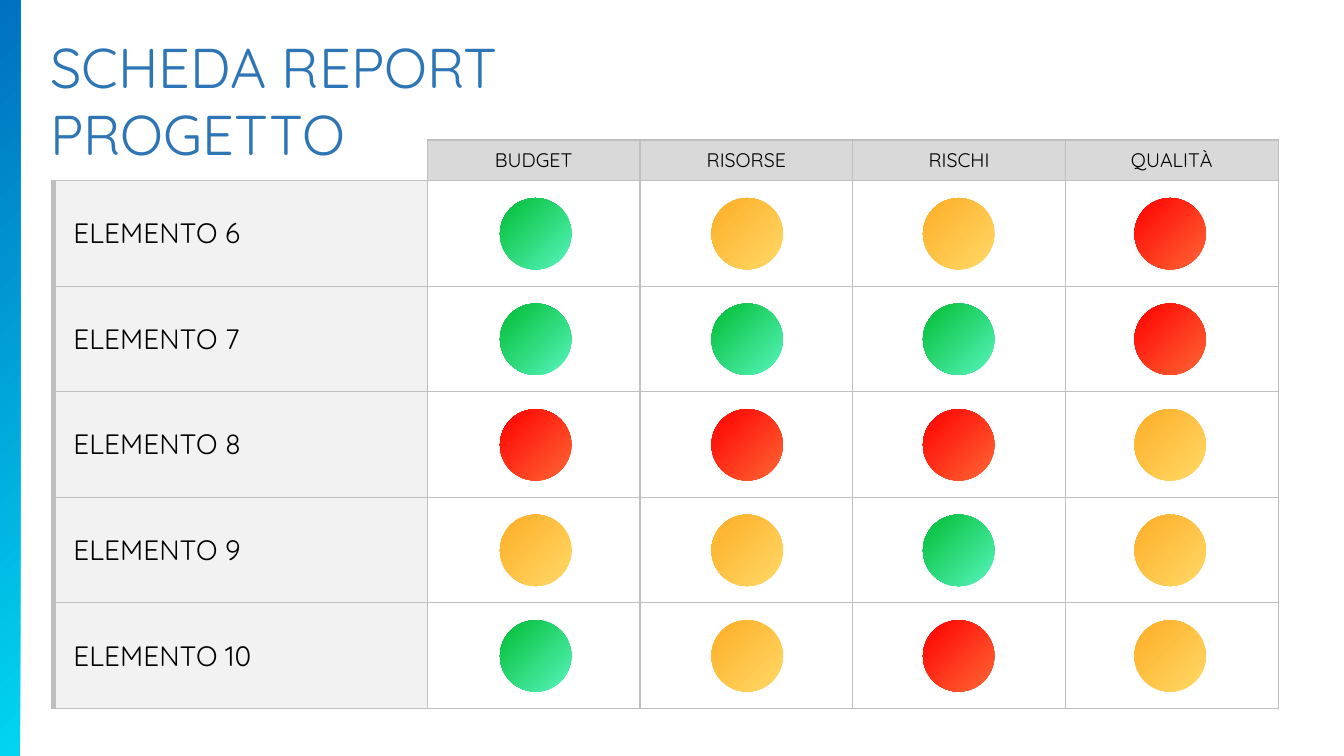
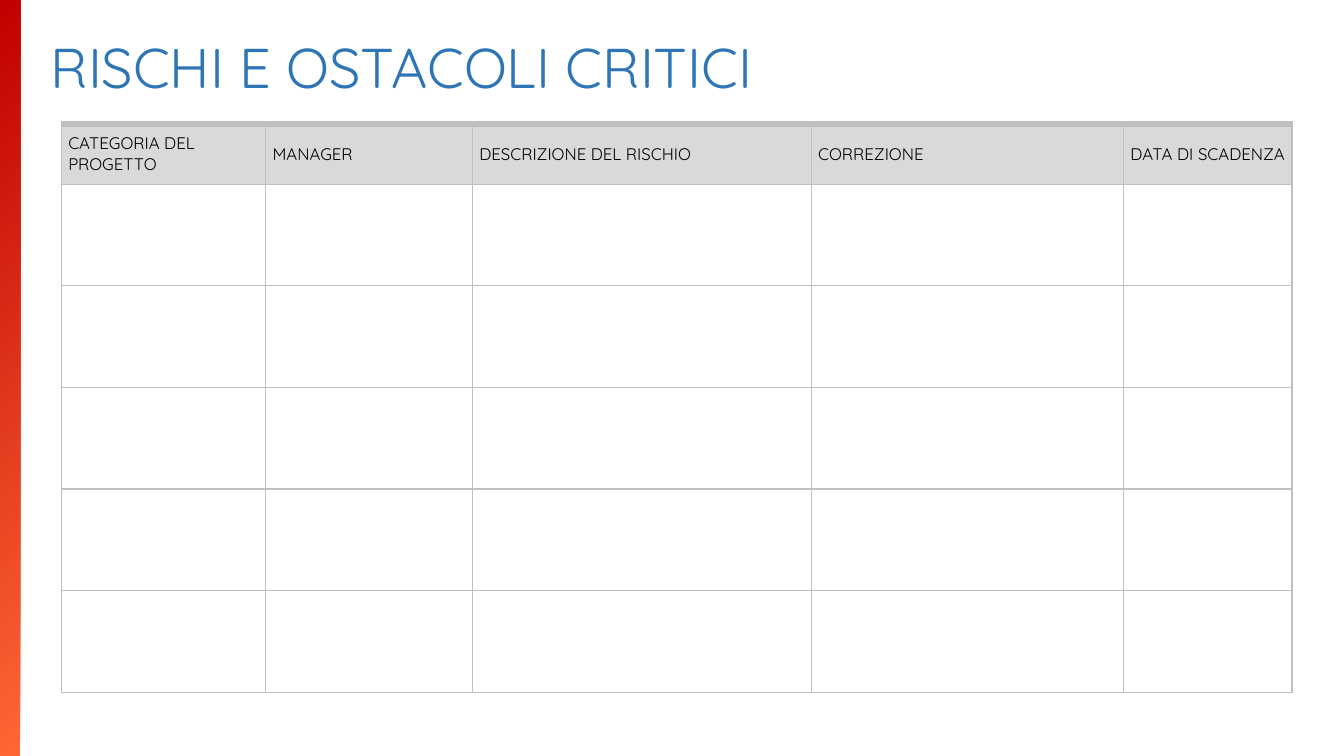
from lxml import etree
from pptx import Presentation
from pptx.dml import color
from pptx.enum import shapes, text
from pptx.oxml import ns
from pptx.util import Cm, Pt

FONT = "Quicksand"
BLUE, BLACK, WHITE = "2E75B6", "000000", "FFFFFF"
BORDER, HEADER, LABEL = "BFBFBF", "D9D9D9", "F2F2F2"
THIN, THICK = 1, 4.5

# Gradients run from the bottom right to the top left
BLUE_BAND = ("00D6F1", "0070C0")
RED_BAND = ("FE6735", "C00000")
STATUS = {
    "G": ("58F5BE", "00BD32"),
    "Y": ("FFD966", "FEAD27"),
    "R": ("FE6735", "FF0000"),
}


def rgb(value):
    return color.RGBColor.from_string(value)


class Report:
    """Holds the deck, its style and the current slide."""

    def __init__(self):
        self.deck = Presentation()
        self.deck.slide_width = Cm(33.87)
        self.deck.slide_height = Cm(19.05)
        self.page = None

    def style(self, para, size, colour, align=text.PP_ALIGN.LEFT):
        para.alignment = align
        para.font.name = FONT
        para.font.size = Pt(size)
        para.font.color.rgb = rgb(colour)

    def add_page(self, title, title_width, band):
        self.page = self.deck.slides.add_slide(self.deck.slide_layouts[5])
        box = self.page.shapes.title
        box.left, box.top = Cm(1.02), Cm(0.69)
        box.width, box.height = Cm(title_width), Cm(1.96)
        frame = box.text_frame
        frame.text = title
        frame.word_wrap = True
        frame.auto_size = text.MSO_AUTO_SIZE.NONE
        frame.vertical_anchor = text.MSO_ANCHOR.TOP
        para = frame.paragraphs[0]
        para.line_spacing = 1.0
        self.style(para, 40, BLUE)
        self.shape(shapes.MSO_SHAPE.RECTANGLE, 0, 0, 0.51, 19.05, band)

    def shape(self, kind, left, top, width, height, gradient):
        item = self.page.shapes.add_shape(
            kind, Cm(left), Cm(top), Cm(width), Cm(height))
        item.shadow.inherit = False
        item.line.fill.background()
        item.fill.gradient()
        item.fill.gradient_angle = 135
        for stop, value in zip(item.fill.gradient_stops, gradient):
            stop.color.rgb = rgb(value)

    def table(self, left, top, widths, heights):
        grid = self.page.shapes.add_table(
            len(heights), len(widths), Cm(left), Cm(top),
            Cm(sum(widths)), Cm(sum(heights))).table
        grid.first_row = grid.horz_banding = False
        for column, width in zip(grid.columns, widths):
            column.width = Cm(width)
        for row, height in zip(grid.rows, heights):
            row.height = Cm(height)
        return grid

    def border(self, cell, **widths):
        """Draw the four sides; a width of 0 hides a side."""
        props = cell._tc.get_or_add_tcPr()
        for side in "LRTB":
            width = widths.get(side, THIN)
            line = etree.SubElement(props, ns.qn("a:ln" + side), w=str(Pt(width)))
            if width:
                fill = etree.SubElement(line, ns.qn("a:solidFill"))
                etree.SubElement(fill, ns.qn("a:srgbClr"), val=BORDER)
            else:
                etree.SubElement(line, ns.qn("a:noFill"))

    def cell(self, cell, words="", fill=WHITE, size=12, inset=0.17,
             align=text.PP_ALIGN.LEFT, **borders):
        self.border(cell, **borders)
        if fill:
            cell.fill.solid()
            cell.fill.fore_color.rgb = rgb(fill)
        else:
            cell.fill.background()
        cell.margin_left, cell.margin_right = Cm(inset), Cm(0.17)
        cell.margin_top = cell.margin_bottom = 0
        cell.vertical_anchor = text.MSO_ANCHOR.MIDDLE
        cell.text = words
        self.style(cell.text_frame.paragraphs[0], size, BLACK, align)


def add_scorecard(report):
    report.add_page("SCHEDA REPORT PROGETTO", 16.79, BLUE_BAND)
    headings = ["BUDGET", "RISORSE", "RISCHI", "QUALITÀ"]
    ratings = {
        "ELEMENTO 6": "GYYR",
        "ELEMENTO 7": "GGGR",
        "ELEMENTO 8": "RRRY",
        "ELEMENTO 9": "YYGY",
        "ELEMENTO 10": "GYRY",
    }
    grid = report.table(1.35, 3.53, [9.42] + [5.36] * 4, [1.02] + [2.66] * 5)

    # Header row
    report.cell(grid.cell(0, 0), fill=None, L=0, T=0)
    for col, heading in enumerate(headings, 1):
        report.cell(grid.cell(0, col), heading, HEADER, 14,
                    align=text.PP_ALIGN.CENTER)

    # Rows with their status lights
    for row, (name, marks) in enumerate(ratings.items()):
        report.cell(grid.cell(row + 1, 0), name, LABEL, 20, inset=0.5, L=THICK)
        for col, mark in enumerate(marks):
            report.cell(grid.cell(row + 1, col + 1))
            report.shape(shapes.MSO_SHAPE.OVAL, 12.6 + col * 5.33,
                         4.99 + row * 2.66, 1.8, 1.8, STATUS[mark])


def add_risks(report):
    report.add_page("RISCHI E OSTACOLI CRITICI", 24.1, RED_BAND)
    columns = {
        "CATEGORIA DEL PROGETTO": 5.15,
        "MANAGER": 5.21,
        "DESCRIZIONE DEL RISCHIO": 8.54,
        "CORREZIONE": 7.87,
        "DATA DI SCADENZA": 4.24,
    }
    heights = [1.52] + [2.56] * 5
    grid = report.table(1.55, 3.12, list(columns.values()), heights)
    for col, heading in enumerate(columns):
        report.cell(grid.cell(0, col), heading, HEADER, T=THICK)
        for row in range(1, len(heights)):
            report.cell(grid.cell(row, col))


def main():
    report = Report()
    add_scorecard(report)
    add_risks(report)
    report.deck.save("out.pptx")


if __name__ == "__main__":
    main()
